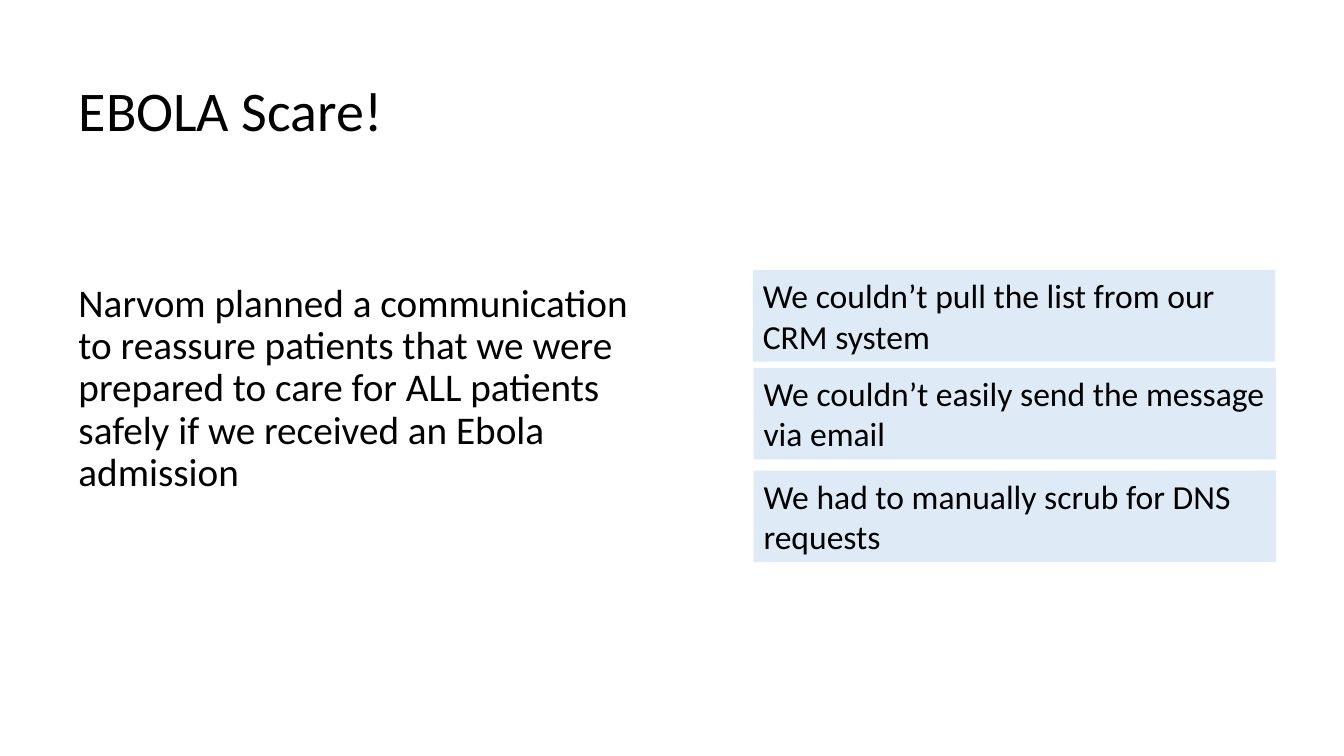
from pptx import Presentation
from pptx.dml.color import RGBColor
from pptx.enum.shapes import MSO_SHAPE as Shape
from pptx.enum.text import MSO_ANCHOR as Anchor, MSO_AUTO_SIZE as Fit, PP_ALIGN as Align
from pptx.util import Pt

BLACK = RGBColor(0x00, 0x00, 0x00)
PALE = RGBColor(0xDE, 0xEB, 0xF7)


def write(frame, text, size, anchor, fit=Fit.NONE):
    frame.word_wrap = True
    frame.auto_size = fit
    frame.vertical_anchor = anchor
    para = frame.paragraphs[0]
    para.alignment = Align.LEFT
    run = para.add_run()
    run.text = text
    run.font.size = Pt(size)
    run.font.name = "Calibri"
    run.font.color.rgb = BLACK
    return para


deck = Presentation()
deck.slide_width, deck.slide_height = Pt(960), Pt(540)
slide = deck.slides.add_slide(deck.slide_layouts[5])

title = slide.shapes.title
title.left, title.top, title.width, title.height = Pt(49), Pt(28.8), Pt(828), Pt(104.4)
para = write(title.text_frame, "EBOLA Scare!", 40, Anchor.MIDDLE)
para.line_spacing = 0.9

body = slide.shapes.add_textbox(Pt(49), Pt(106.6), Pt(408.2), Pt(342.7))
para = write(
    body.text_frame,
    "Narvom planned a communication to reassure patients that we were "
    "prepared to care for ALL patients safely if we received an Ebola admission",
    28, Anchor.MIDDLE)
para.line_spacing = 0.9
para.space_before = Pt(10)

issues = [
    (537.8, 193, "We couldn’t pull the list from our CRM system"),
    (538.3, 262.8, "We couldn’t easily send the message via email"),
    (538.3, 336.2, "We had to manually scrub for DNS requests"),
]
for left, top, text in issues:
    box = slide.shapes.add_shape(Shape.RECTANGLE, Pt(left), Pt(top), Pt(373), Pt(65.4))
    box.shadow.inherit = False
    box.fill.solid()
    box.fill.fore_color.rgb = PALE
    box.line.fill.background()
    write(box.text_frame, text, 24, Anchor.TOP, Fit.SHAPE_TO_FIT_TEXT)

deck.save("out.pptx")
